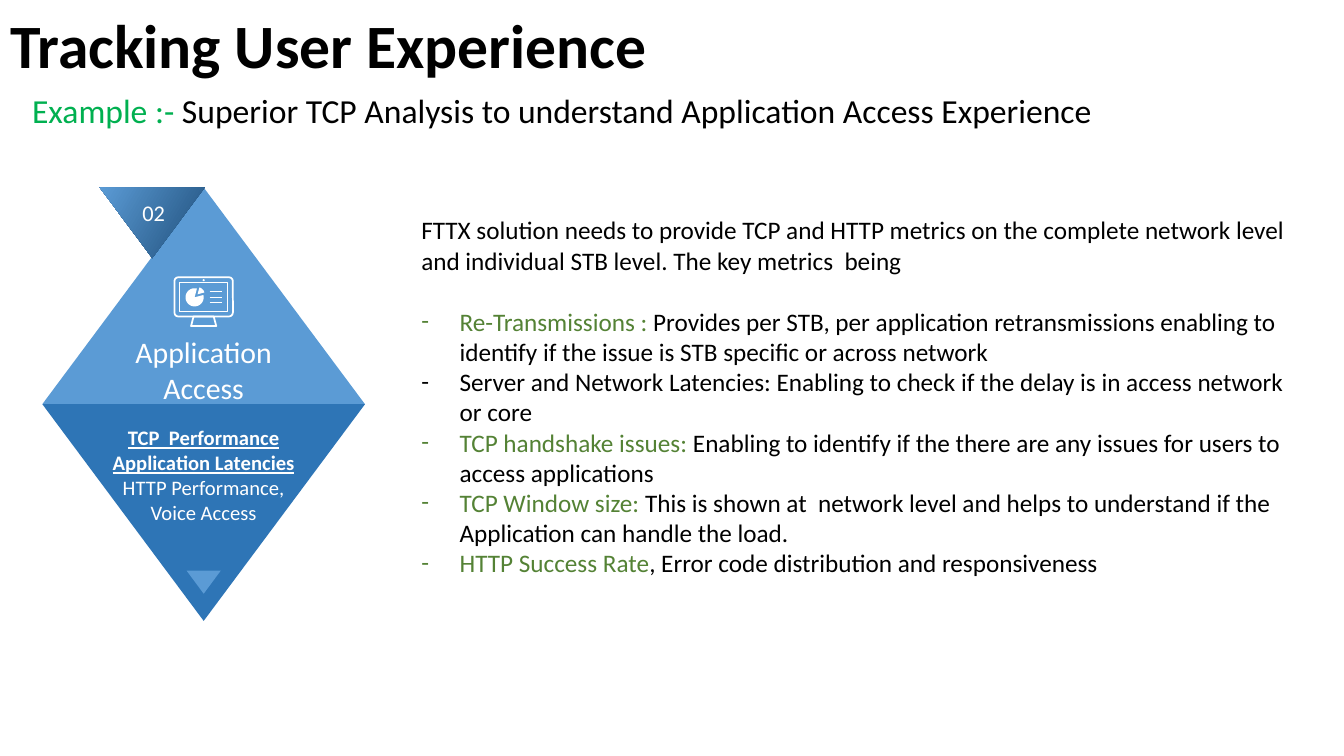
from math import cos, radians, sin

from lxml.etree import SubElement
from pptx import Presentation
from pptx.dml.color import RGBColor
from pptx.enum.shapes import MSO_CONNECTOR, MSO_SHAPE
from pptx.enum.text import MSO_ANCHOR, PP_ALIGN
from pptx.oxml.ns import qn
from pptx.util import Inches, Pt

CELL = Inches(0.1)  # grid: 133.3 columns by 75 rows
COLS, ROWS = 133.3, 75
FONT = "Calibri"
BLACK = RGBColor(0x00, 0x00, 0x00)
WHITE = RGBColor(0xFF, 0xFF, 0xFF)
LIGHT_BLUE = RGBColor(0x5B, 0x9B, 0xD5)
BLUE = RGBColor(0x2E, 0x75, 0xB6)
NAVY = RGBColor(0x1F, 0x4E, 0x79)
GREEN = RGBColor(0x00, 0xB0, 0x50)
OLIVE = RGBColor(0x54, 0x82, 0x35)

DIAMOND_X, DIAMOND_Y, DIAMOND_W, HALF_H = 4.2, 18.6, 32, 21.5
MIDDLE_Y = DIAMOND_Y + HALF_H

INTRO = ("FTTX solution needs to provide TCP and HTTP metrics on the complete network level "
         "and individual STB level. The key metrics  being")
METRICS = [
    ("Re-Transmissions : ", "Provides per STB, per application retransmissions enabling to "
     "identify if the issue is STB specific or across network"),
    ("", "Server and Network Latencies: Enabling to check if the delay is in access network or core"),
    ("TCP handshake issues: ", "Enabling to identify if the there are any issues for users to "
     "access applications"),
    ("TCP Window size: ", "This is shown at  network level and helps to understand if the "
     "Application can handle the load."),
    ("HTTP Success Rate", ", Error code distribution and responsiveness"),
]


def grid(*lengths):
    return [round(n * CELL) for n in lengths]


def write(p, text, size=18, color=BLACK, bold=False, underline=False):
    r = p.add_run()
    r.text = text
    f = r.font
    f.name, f.size, f.bold, f.underline = FONT, Pt(size), bold, underline
    f.color.rgb = color


def text_box(s, x, y, w, h):
    tf = s.shapes.add_textbox(*grid(x, y, w, h)).text_frame
    tf.word_wrap = True
    return tf


def centred_lines(s, box, lines, **fmt):
    """Write (text, emphasised) pairs as centred white lines."""
    tf = text_box(s, *box)
    for i, (line, strong) in enumerate(lines):
        p = tf.add_paragraph() if i else tf.paragraphs[0]
        p.alignment = PP_ALIGN.CENTER
        write(p, line, color=WHITE, bold=strong, underline=strong, **fmt)


def paint(sp, color):
    sp.shadow.inherit = False
    sp.fill.solid()
    sp.fill.fore_color.rgb = color
    sp.line.fill.background()


def triangle(s, x, y, w, h, color, down=False):
    sp = s.shapes.add_shape(MSO_SHAPE.ISOSCELES_TRIANGLE, *grid(x, y, w, h))
    paint(sp, color)
    sp.rotation = 180 if down else 0
    return sp


def outline(sp, width):
    sp.shadow.inherit = False
    sp.fill.background()
    sp.line.color.rgb = WHITE
    sp.line.width = Pt(width)


def polygon(s, points):
    start, *rest = [grid(*pt) for pt in points]
    fb = s.shapes.build_freeform(*start)
    fb.add_line_segments(rest, close=True)
    return fb.convert_to_shape()


def pie(s, cx, cy, radius, first, last):
    """Draw a white sector; angles in degrees, clockwise from the right."""
    arc = [(cx + radius * cos(radians(a)), cy + radius * sin(radians(a)))
           for a in range(first, last + 1, 5)]
    paint(polygon(s, [(cx, cy), *arc]), WHITE)


def monitor_icon(s):
    frame = s.shapes.add_shape(MSO_SHAPE.ROUNDED_RECTANGLE, *grid(17.3, 27.5, 5.8, 3.9))
    frame.adjustments[0] = 0.1
    outline(frame, 1.25)
    screen = s.shapes.add_shape(MSO_SHAPE.RECTANGLE, *grid(17.85, 28.05, 4.7, 2.9))
    outline(screen, 0.75)
    outline(polygon(s, [(19.2, 31.4), (18.95, 32.35), (21.45, 32.35), (21.2, 31.4)]), 1.25)
    pie(s, 19.3, 29.5, 0.9, -15, 285)
    pie(s, 19.6, 29.2, 0.7, -75, -15)
    dot = s.shapes.add_shape(MSO_SHAPE.OVAL, *grid(20.1, 27.7, 0.2, 0.2))
    paint(dot, WHITE)
    for row in range(3):
        y = 28.95 + 0.52 * row
        line = s.shapes.add_connector(MSO_CONNECTOR.STRAIGHT, *grid(20.8, y, 22, y))
        line.line.color.rgb = WHITE
        line.line.width = Pt(0.75)
        SubElement(line._element.spPr, qn("a:effectLst"))


def diamond(s):
    triangle(s, DIAMOND_X, DIAMOND_Y, DIAMOND_W, HALF_H, LIGHT_BLUE)
    tab = triangle(s, 9.9, DIAMOND_Y, 10.4, 7, LIGHT_BLUE, down=True)
    tab.fill.gradient()
    tab.fill.gradient_angle = 330
    for stop, color in zip(tab.fill.gradient_stops, (NAVY, LIGHT_BLUE)):
        stop.color.rgb = color
    triangle(s, DIAMOND_X, MIDDLE_Y, DIAMOND_W, HALF_H, BLUE, down=True)
    triangle(s, 18.5, 56.6, 3.4, 2.3, LIGHT_BLUE, down=True)
    centred_lines(s, (12.1, 19.3, 6.3, 3.7), [("02", False)], size=16)
    centred_lines(s, (DIAMOND_X, 32.6, DIAMOND_W, 8.2),
                  [("Application", False), ("Access", False)], size=21.3)
    centred_lines(s, (DIAMOND_X, 41.7, DIAMOND_W, 10.9),
                  [("TCP  Performance", True), ("Application Latencies", True),
                   ("HTTP Performance,", False), ("Voice Access", False)], size=14.7)
    monitor_icon(s)


def dash_bullet(p):
    pPr = p._p.get_or_add_pPr()
    indent = Inches(0.38)
    pPr.set("marL", str(indent))
    pPr.set("indent", str(-indent))
    SubElement(pPr, qn("a:buFont")).set("typeface", FONT)
    SubElement(pPr, qn("a:buChar")).set("char", "-")


def metrics(s):
    tf = text_box(s, 40.8, 20.8, 89.2, 37.4)
    write(tf.paragraphs[0], INTRO)
    for i, (name, detail) in enumerate(METRICS):
        p = tf.add_paragraph()
        if i == 0:
            p.space_before = Pt(22)
        dash_bullet(p)
        if name:
            write(p, name, color=OLIVE)
        write(p, detail)


def headings(s):
    title = s.shapes.title
    title.left, title.top, title.width, title.height = grid(0, 0.1, 115, 9.5)
    tf = title.text_frame
    tf.vertical_anchor = MSO_ANCHOR.MIDDLE
    p = tf.paragraphs[0]
    p.alignment = PP_ALIGN.LEFT
    p.line_spacing = 0.9
    write(p, "Tracking User Experience", size=44, bold=True)

    p = text_box(s, 2.2, 8.9, 126.7, 5.4).paragraphs[0]
    p.line_spacing = 0.9
    write(p, "Example :- ", size=24, color=GREEN)
    write(p, "Superior TCP Analysis to understand Application Access Experience", size=24)


def main():
    prs = Presentation()
    prs.slide_width, prs.slide_height = grid(COLS, ROWS)
    s = prs.slides.add_slide(prs.slide_layouts[5])
    headings(s)
    diamond(s)
    metrics(s)
    prs.save("out.pptx")


if __name__ == "__main__":
    main()
